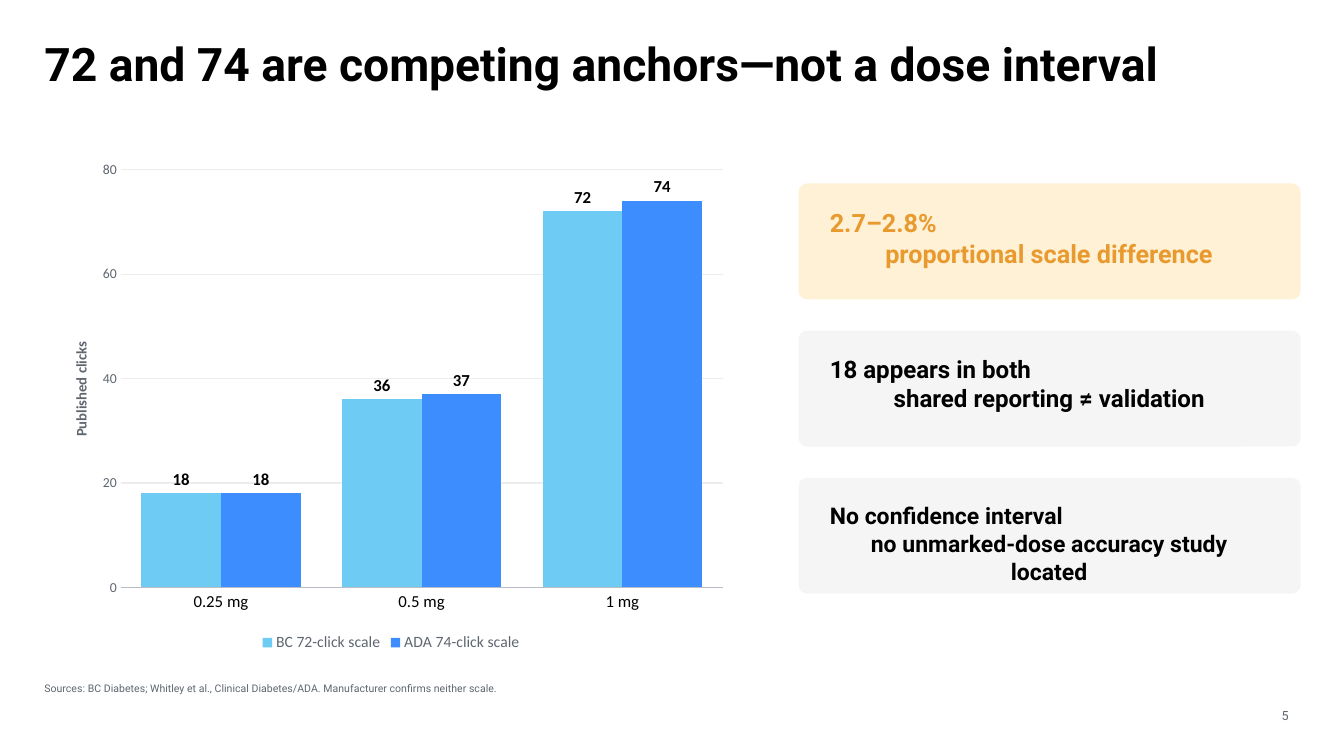
import pptx
import pptx.chart.data
import pptx.dml.color
import pptx.enum.chart
import pptx.enum.shapes
import pptx.enum.text
import pptx.oxml
import pptx.oxml.ns
import pptx.util

Inches = pptx.util.Inches
Pt = pptx.util.Pt
RGBColor = pptx.dml.color.RGBColor
PP_ALIGN = pptx.enum.text.PP_ALIGN

BLACK = RGBColor(0x00, 0x00, 0x00)
WHITE = RGBColor(0xFF, 0xFF, 0xFF)
GRAY = RGBColor(0x5F, 0x66, 0x70)
AXIS_GRAY = RGBColor(0xB8, 0xBC, 0xC4)
GRID_GRAY = RGBColor(0xED, 0xED, 0xED)
CARD_GRAY = RGBColor(0xF5, 0xF5, 0xF5)
CREAM = RGBColor(0xFF, 0xF1, 0xD6)
ORANGE = RGBColor(0xE9, 0x9A, 0x2F)
SKY = RGBColor(0x6D, 0xCB, 0xF4)
BLUE = RGBColor(0x3D, 0x8D, 0xFF)


def set_layout(parent, position, **fractions):
    """Place a chart part by fractions of the chart area."""
    old = parent.find(pptx.oxml.ns.qn("c:layout"))
    if old is not None:
        parent.remove(old)
    inner = '<c:layoutTarget val="inner"/>' if "w" in fractions else ""
    modes = "".join(f'<c:{key}Mode val="edge"/>' for key in "xy")
    values = "".join(f'<c:{key} val="{value}"/>' for key, value in fractions.items())
    parent.insert(position, pptx.oxml.parse_xml(
        f'<c:layout {pptx.oxml.ns.nsdecls("c")}><c:manualLayout>'
        f'{inner}{modes}{values}</c:manualLayout></c:layout>'))


class ClickSlide:
    """Hold the fonts and the current slide, and draw its elements."""

    text_font = "Roboto"
    chart_font = "Calibri"

    def __init__(self, slide):
        self.slide = slide

    def style(self, font, size, color, bold=False, name=None):
        """Set the main properties of a font."""
        font.name = name or self.text_font
        font.size = Pt(size)
        font.bold = bold
        font.color.rgb = color

    def text(self, box, lines, size, color, bold=False, anchor="TOP"):
        """Add a text box from (wording, alignment) lines."""
        frame = self.slide.shapes.add_textbox(*map(Inches, box)).text_frame
        frame.word_wrap = True
        frame.margin_left = frame.margin_right = 0
        frame.margin_top = frame.margin_bottom = 0
        frame.vertical_anchor = getattr(pptx.enum.text.MSO_ANCHOR, anchor)
        for index, (wording, alignment) in enumerate(lines):
            paragraph = frame.add_paragraph() if index else frame.paragraphs[0]
            paragraph.text = wording
            paragraph.alignment = alignment
            self.style(paragraph.font, size, color, bold)

    def card(self, top, heading, detail, size, fill, color):
        """Add a rounded card with a heading and a centred detail."""
        panel = self.slide.shapes.add_shape(
            pptx.enum.shapes.MSO_SHAPE.ROUNDED_RECTANGLE,
            Inches(7.92), Inches(top), Inches(4.98), Inches(1.15))
        panel.adjustments[0] = 0.073
        panel.shadow.inherit = False
        panel.fill.solid()
        panel.fill.fore_color.rgb = fill
        panel.line.fill.background()
        lines = [(heading, PP_ALIGN.LEFT), (detail, PP_ALIGN.CENTER)]
        self.text((8.23, top + 0.24, 4.35, 0.73), lines, size, color, True)

    def column_chart(self, box, categories, series):
        """Add the clustered columns from (name, values, colour) series."""
        data = pptx.chart.data.CategoryChartData()
        data.categories = categories
        for name, values, _ in series:
            data.add_series(name, values)
        chart = self.slide.shapes.add_chart(
            pptx.enum.chart.XL_CHART_TYPE.COLUMN_CLUSTERED,
            *map(Inches, box), data).chart
        self.style(chart.font, 10, BLACK, name=self.chart_font)
        chart.has_title = False
        chart.has_legend = True
        chart.legend.position = pptx.enum.chart.XL_LEGEND_POSITION.BOTTOM
        chart.legend.include_in_layout = False
        self.style(chart.legend.font, 11.2, GRAY, name=self.chart_font)

        plot = chart.plots[0]
        plot.gap_width = 52
        plot.overlap = 0
        plot.vary_by_categories = False
        for columns, (_, _, color) in zip(plot.series, series):
            columns.format.fill.solid()
            columns.format.fill.fore_color.rgb = color
            labels = columns.data_labels
            labels.show_value = True
            labels.position = pptx.enum.chart.XL_LABEL_POSITION.OUTSIDE_END
            self.style(labels.font, 12, BLACK, True, self.chart_font)

        doses, clicks = chart.category_axis, chart.value_axis
        for axis, size, color in ((doses, 12, BLACK), (clicks, 9.8, GRAY)):
            axis.major_tick_mark = pptx.enum.chart.XL_TICK_MARK.NONE
            axis.minor_tick_mark = pptx.enum.chart.XL_TICK_MARK.NONE
            self.style(axis.tick_labels.font, size, color, name=self.chart_font)
        doses.format.line.color.rgb = AXIS_GRAY
        doses.format.line.width = Pt(0.75)
        clicks.format.line.fill.background()
        clicks.minimum_scale, clicks.maximum_scale = 0, 80
        clicks.major_unit = 20
        clicks.has_major_gridlines = True
        clicks.major_gridlines.format.line.color.rgb = GRID_GRAY
        clicks.major_gridlines.format.line.width = Pt(0.75)

        caption = clicks.axis_title.text_frame.paragraphs[0]
        caption.text = "Published clicks"
        self.style(caption.font, 10.5, GRAY, True, self.chart_font)
        set_layout(clicks.axis_title._element, 1, x=0.035, y=0.37)
        plot_area = chart._chartSpace.chart.plotArea
        set_layout(plot_area, 0, x=0.11, y=0.035, w=0.868, h=0.829)


def main():
    """Build the slide and save it."""
    deck = pptx.Presentation()
    deck.slide_width, deck.slide_height = Inches(13.33), Inches(7.5)
    slide = deck.slides.add_slide(deck.slide_layouts[6])
    slide.background.fill.solid()
    slide.background.fill.fore_color.rgb = WHITE
    page = ClickSlide(slide)

    headline = "72 and 74 are competing anchors—not a dose interval"
    page.text((0.44, 0.35, 12.46, 0.96), [(headline, PP_ALIGN.LEFT)], 33, BLACK, True)
    page.column_chart((0.44, 1.51, 6.88, 5), ["0.25 mg", "0.5 mg", "1 mg"], [
        ("BC 72-click scale", (18, 36, 72), SKY),
        ("ADA 74-click scale", (18, 37, 74), BLUE),
    ])

    findings = [
        ("2.7–2.8%", "proportional scale difference", 18, CREAM, ORANGE),
        ("18 appears in both", "shared reporting ≠ validation", 17.2, CARD_GRAY, BLACK),
        ("No confidence interval", "no unmarked-dose accuracy study located",
         16.4, CARD_GRAY, BLACK),
    ]
    for row, finding in enumerate(findings):
        page.card(1.82 + row * 1.46, *finding)

    sources = ("Sources: BC Diabetes; Whitley et al., Clinical Diabetes/ADA. "
               "Manufacturer confirms neither scale.")
    page.text((0.44, 6.77, 11.67, 0.33), [(sources, PP_ALIGN.LEFT)], 7.5, GRAY)
    page.text((12.34, 6.98, 0.44, 0.19), [("5", PP_ALIGN.RIGHT)], 9, GRAY, anchor="BOTTOM")
    deck.save("out.pptx")


if __name__ == "__main__":
    main()
